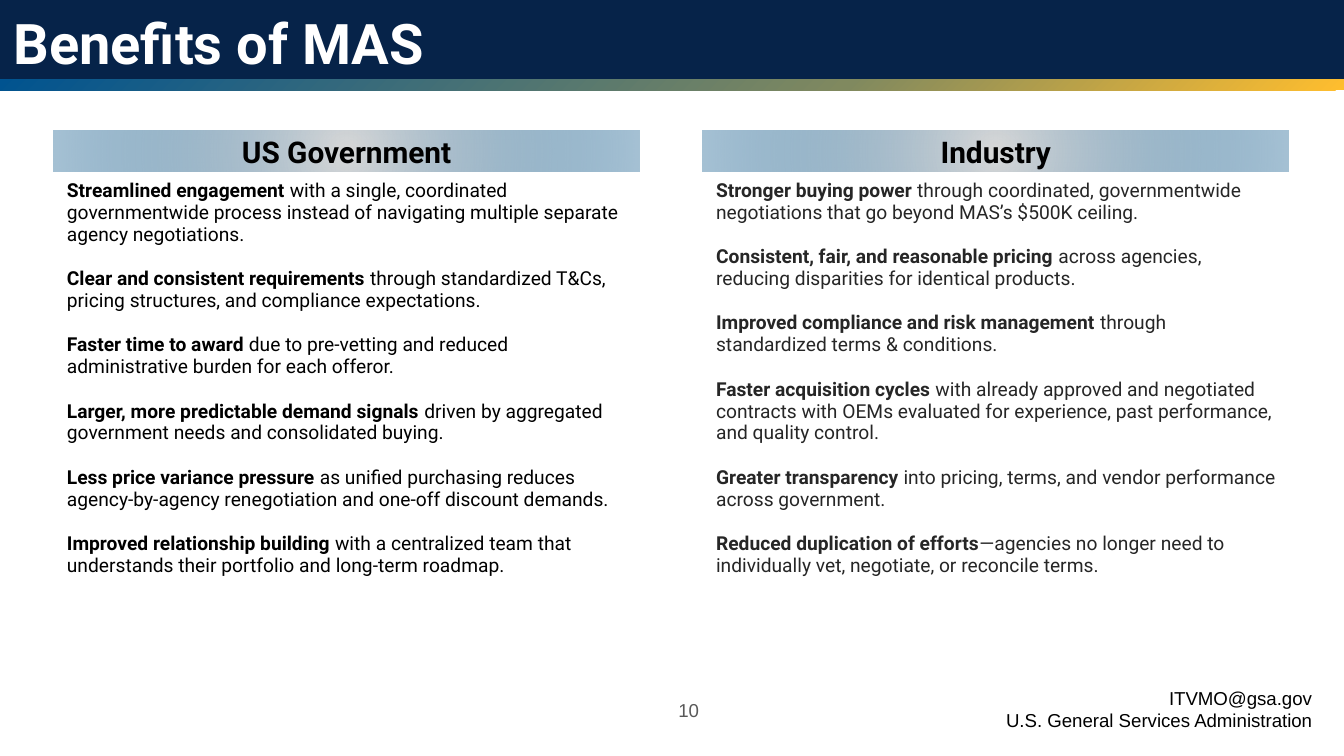
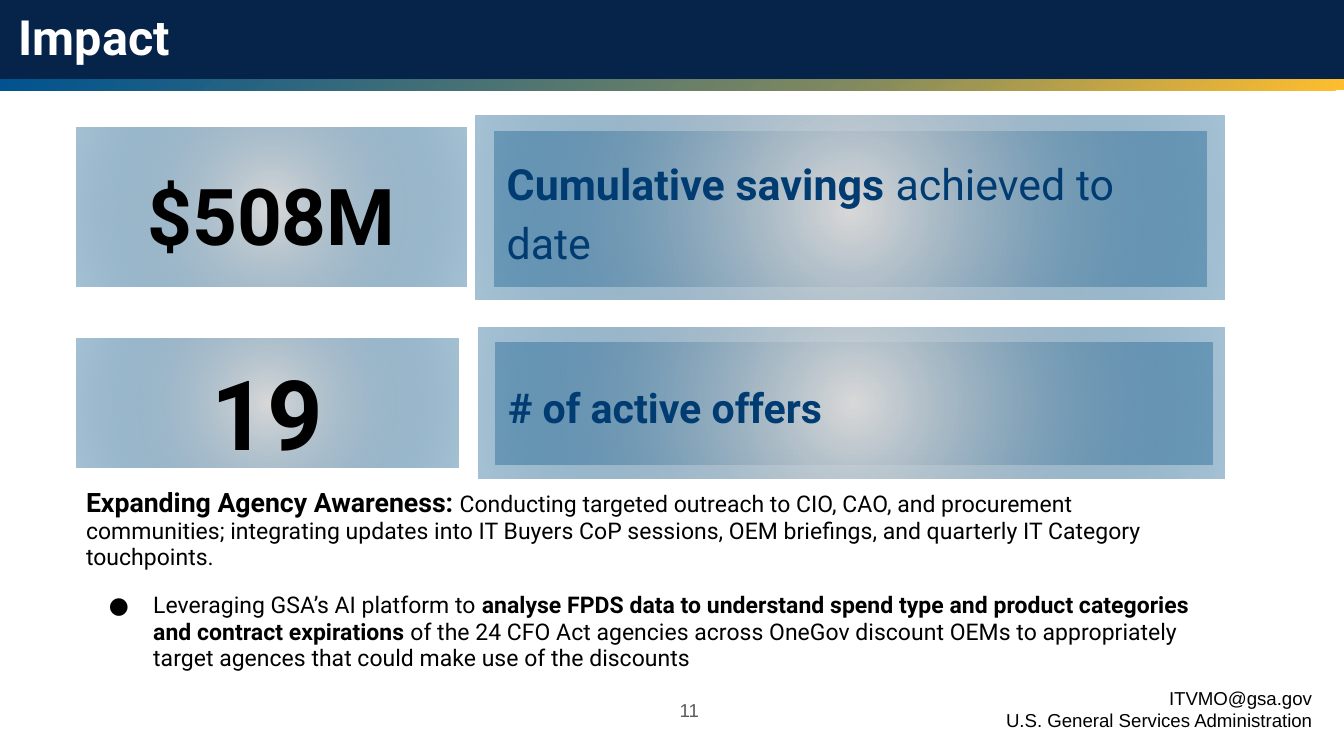
import pptx
import pptx.util
import pptx.dml.color
import pptx.enum.shapes
import pptx.enum.text
import pptx.oxml
import pptx.oxml.ns

Inches = pptx.util.Inches
Pt = pptx.util.Pt
RGBColor = pptx.dml.color.RGBColor
ALIGN = pptx.enum.text.PP_ALIGN
ANCHOR = pptx.enum.text.MSO_ANCHOR

# Shared colours and fonts
NAVY = RGBColor(0x06, 0x23, 0x49)
BLUE = RGBColor(0x00, 0x53, 0x90)
OLIVE = RGBColor(0x80, 0x89, 0x5F)
GOLD = RGBColor(0xFF, 0xBE, 0x2E)
SILVER = RGBColor(0xD8, 0xD8, 0xD8)
STEEL = RGBColor(0x0D, 0x58, 0x8B)
INK_BLUE = RGBColor(0x00, 0x3C, 0x71)
WHITE = RGBColor(0xFF, 0xFF, 0xFF)
BLACK = RGBColor(0x00, 0x00, 0x00)
CHARCOAL = RGBColor(0x26, 0x26, 0x26)
GREY = RGBColor(0x59, 0x59, 0x59)
HEAD_FONT = "Roboto"
FOOTER_FONT = "Arial"

# Gradients: stops as (percent, colour, opacity percent), and the focus rectangle
BAND_GRADIENT = ([(0, BLUE, 100), (63, OLIVE, 100), (100, GOLD, 100)], (0, 0, 100, 100))
PANEL_GRADIENT = ([(0, SILVER, 100), (100, STEEL, 37)], (50, 50, 50, 50))

WIDE_INSETS = (0.1, 0.1)
PANEL_INSETS = (0.09, 0.05)
BODY_INSETS = (0.07, 0.07)

GOVERNMENT_BENEFITS = [
    ("Streamlined engagement", " with a single, coordinated governmentwide process "
     "instead of navigating multiple separate agency negotiations."),
    ("Clear and consistent requirements", " through standardized T&Cs, pricing structures, "
     "and compliance expectations."),
    ("Faster time to award", " due to pre-vetting and reduced administrative burden "
     "for each offeror."),
    ("Larger, more predictable demand signals", " driven by aggregated government needs "
     "and consolidated buying."),
    ("Less price variance pressure", " as unified purchasing reduces agency-by-agency "
     "renegotiation and one-off discount demands."),
    ("Improved relationship building", " with a centralized team that understands "
     "their portfolio and long-term roadmap."),
]
INDUSTRY_BENEFITS = [
    ("Stronger buying power", " through coordinated, governmentwide negotiations "
     "that go beyond MAS’s $500K ceiling."),
    ("Consistent, fair, and reasonable pricing", " across agencies, reducing disparities "
     "for identical products."),
    ("Improved compliance and risk management", " through standardized terms & conditions."),
    ("Faster acquisition cycles", " with already approved and negotiated contracts with OEMs "
     "evaluated for experience, past performance, and quality control."),
    ("Greater transparency", " into pricing, terms, and vendor performance across government."),
    ("Reduced duplication of efforts", "—agencies no longer need to individually vet, "
     "negotiate, or reconcile terms."),
]


def set_gradient(shape, gradient):
    stops, focus = gradient
    stop_xml = "".join(
        f'<a:gs pos="{position * 1000}"><a:srgbClr val="{color}">'
        f'<a:alpha val="{opacity * 1000}"/></a:srgbClr></a:gs>'
        for position, color, opacity in stops)
    sides = " ".join(f'{side}="{value * 1000}"' for side, value in zip("ltrb", focus))
    fill = pptx.oxml.parse_xml(
        f'<a:gradFill {pptx.oxml.ns.nsdecls("a")} rotWithShape="1"><a:gsLst>{stop_xml}</a:gsLst>'
        f'<a:path path="circle"><a:fillToRect {sides}/></a:path></a:gradFill>')
    shape.fill.background()
    properties = shape._element.spPr
    properties.replace(properties.find(pptx.oxml.ns.qn("a:noFill")), fill)


def add_rectangle(shapes, box, fill):
    """Add a borderless rectangle; fill is a colour or a gradient."""
    shape = shapes.add_shape(pptx.enum.shapes.MSO_SHAPE.RECTANGLE, *map(Inches, box))
    shape.shadow.inherit = False
    shape.line.fill.background()
    if isinstance(fill, RGBColor):
        shape.fill.solid()
        shape.fill.fore_color.rgb = fill
    else:
        set_gradient(shape, fill)
    return shape


def add_textbox(slide, box):
    return slide.shapes.add_textbox(*map(Inches, box))


def prepare_frame(shape, insets=WIDE_INSETS, anchor=ANCHOR.TOP):
    frame = shape.text_frame
    frame.word_wrap = True
    frame.auto_size = pptx.enum.text.MSO_AUTO_SIZE.NONE
    frame.vertical_anchor = anchor
    frame.margin_left = frame.margin_right = Inches(insets[0])
    frame.margin_top = frame.margin_bottom = Inches(insets[1])
    return frame


def add_bullet(paragraph, color, size, indent, hanging):
    properties = paragraph._p.get_or_add_pPr()
    properties.set("marL", str(Inches(indent)))
    properties.set("indent", str(-Inches(hanging)))
    namespace = pptx.oxml.ns.nsdecls("a")
    for element in (f'<a:buClr {namespace}><a:srgbClr val="{color}"/></a:buClr>',
                    f'<a:buSzPts {namespace} val="{round(size * 100)}"/>',
                    f'<a:buFont {namespace} typeface="{HEAD_FONT}"/>',
                    f'<a:buChar {namespace} char="●"/>'):
        properties.append(pptx.oxml.parse_xml(element))


def format_paragraph(paragraph, size, color, font=HEAD_FONT, align=ALIGN.LEFT, spacing=1.0):
    paragraph.alignment = align
    paragraph.line_spacing = spacing
    paragraph.font.name = font
    paragraph.font.size = Pt(size)
    paragraph.font.color.rgb = color


def add_runs(paragraph, *parts):
    """Each part is (text, bold) or (text, bold, size)."""
    for text, bold, *size in parts:
        run = paragraph.add_run()
        run.text = text
        run.font.bold = bold
        if size:
            run.font.size = Pt(size[0])


def add_slide(presentation, title, title_box, title_size, anchor, spacing, number):
    """Add a slide with the title band, gradient stripe, contact and number."""
    slide = presentation.slides.add_slide(presentation.slide_layouts[5])
    add_rectangle(slide.shapes, (-0.01, -0.02, 10.01, 0.62), NAVY)

    contact = prepare_frame(add_textbox(slide, (7.09, 5.01, 2.77, 0.54)))
    contact.text = "ITVMO@gsa.gov\nU.S. General Services Administration"
    for paragraph in contact.paragraphs:
        format_paragraph(paragraph, 10, BLACK, FOOTER_FONT, ALIGN.RIGHT)

    add_rectangle(slide.shapes, (-0.01, 0.59, 10.01, 0.08), BAND_GRADIENT)

    # Title placeholder, raised above the band
    heading = slide.shapes.title
    heading.left, heading.top, heading.width, heading.height = map(Inches, title_box)
    paragraph = prepare_frame(heading, anchor=anchor).paragraphs[0]
    format_paragraph(paragraph, title_size, WHITE, spacing=spacing)
    add_runs(paragraph, (title, True))
    slide.shapes._spTree.append(heading._element)

    page = prepare_frame(add_textbox(slide, (4.7, 5.07, 0.6, 0.43)), anchor=ANCHOR.MIDDLE)
    page.text = str(number)
    format_paragraph(page.paragraphs[0], 10, GREY, FOOTER_FONT, ALIGN.RIGHT)
    return slide


def add_panel(shapes, box, parts, size, color, align, insets=PANEL_INSETS, spacing=1.15):
    panel = add_rectangle(shapes, box, PANEL_GRADIENT)
    paragraph = prepare_frame(panel, insets, ANCHOR.MIDDLE).paragraphs[0]
    format_paragraph(paragraph, size, color, align=align, spacing=spacing)
    add_runs(paragraph, *parts)


def add_benefit_column(slide, left, heading, benefits, color):
    add_panel(slide.shapes, (left, 0.97, 4.36, 0.31), [(heading, True)], 16, BLACK,
              ALIGN.CENTER, WIDE_INSETS, 1.0)
    frame = prepare_frame(add_textbox(slide, (left, 1.24, 4.37, 3.74)))
    for index, (lead, rest) in enumerate(benefits):
        paragraph = frame.add_paragraph() if index else frame.paragraphs[0]
        format_paragraph(paragraph, 10.3, color, spacing=0.95)
        if index:
            paragraph.space_before = Pt(12)
        add_runs(paragraph, (lead, True), (rest, False))


def add_metric(slide, value_box, value, value_size, frame_box, label_box, label, label_size):
    """Add a grouped figure with its framed label."""
    shapes = slide.shapes.add_group_shape().shapes
    add_panel(shapes, value_box, [(value, True)], value_size, BLACK, ALIGN.CENTER)
    add_rectangle(shapes, frame_box, PANEL_GRADIENT)
    add_panel(shapes, label_box, label, label_size, INK_BLUE, ALIGN.LEFT)


def build_benefits(presentation):
    slide = add_slide(presentation, "Benefits of MAS", (0, 0, 9.32, 0.63), 30,
                      ANCHOR.MIDDLE, 1.0, 10)
    add_benefit_column(slide, 0.4, "US Government", GOVERNMENT_BENEFITS, BLACK)
    add_benefit_column(slide, 5.23, "Industry", INDUSTRY_BENEFITS, CHARCOAL)


def build_impact(presentation):
    slide = add_slide(presentation, "Impact", (0.04, 0, 7.9, 0.63), 26, ANCHOR.TOP, 0.9, 11)
    add_metric(slide, (0.57, 0.95, 2.9, 1.18), "$508M", 42,
               (3.54, 0.86, 5.57, 1.37), (3.68, 0.98, 5.3, 1.15),
               [("Cumulative savings", True), (" achieved to date", False)], 23)
    add_metric(slide, (0.57, 2.52, 2.84, 0.96), "19", 52,
               (3.56, 2.44, 5.55, 1.12), (3.69, 2.55, 5.33, 0.91),
               [("# of active offers", True)], 22)

    # Outreach text
    frame = prepare_frame(add_textbox(slide, (0.57, 3.56, 8.51, 1.33)), BODY_INSETS)
    outreach = frame.paragraphs[0]
    format_paragraph(outreach, 12.3, BLACK, spacing=0.95)
    add_runs(outreach, ("Expanding Agency Awareness:", True, 14.3),
             (" ", True),
             ("Conducting targeted outreach to CIO, CAO, and procurement communities; "
              "integrating updates into IT Buyers CoP sessions, OEM briefings, and quarterly "
              "IT Category touchpoints.", False))
    analysis = frame.add_paragraph()
    add_bullet(analysis, BLACK, 12.3, 0.5, 0.33)
    format_paragraph(analysis, 12.3, BLACK, spacing=0.95)
    analysis.space_before = Pt(12)
    add_runs(analysis, ("Leveraging GSA’s AI platform to ", False),
             ("analyse FPDS data to understand spend type and product categories "
              "and contract expirations ", True),
             ("of the 24 CFO Act agencies across OneGov discount OEMs to appropriately "
              "target agences that could make use of the discounts", False))


def main():
    presentation = pptx.Presentation()
    # Widescreen, 16:9
    presentation.slide_width = Inches(10)
    presentation.slide_height = Inches(10) * 9 // 16
    build_benefits(presentation)
    build_impact(presentation)
    presentation.save("out.pptx")


if __name__ == "__main__":
    main()
